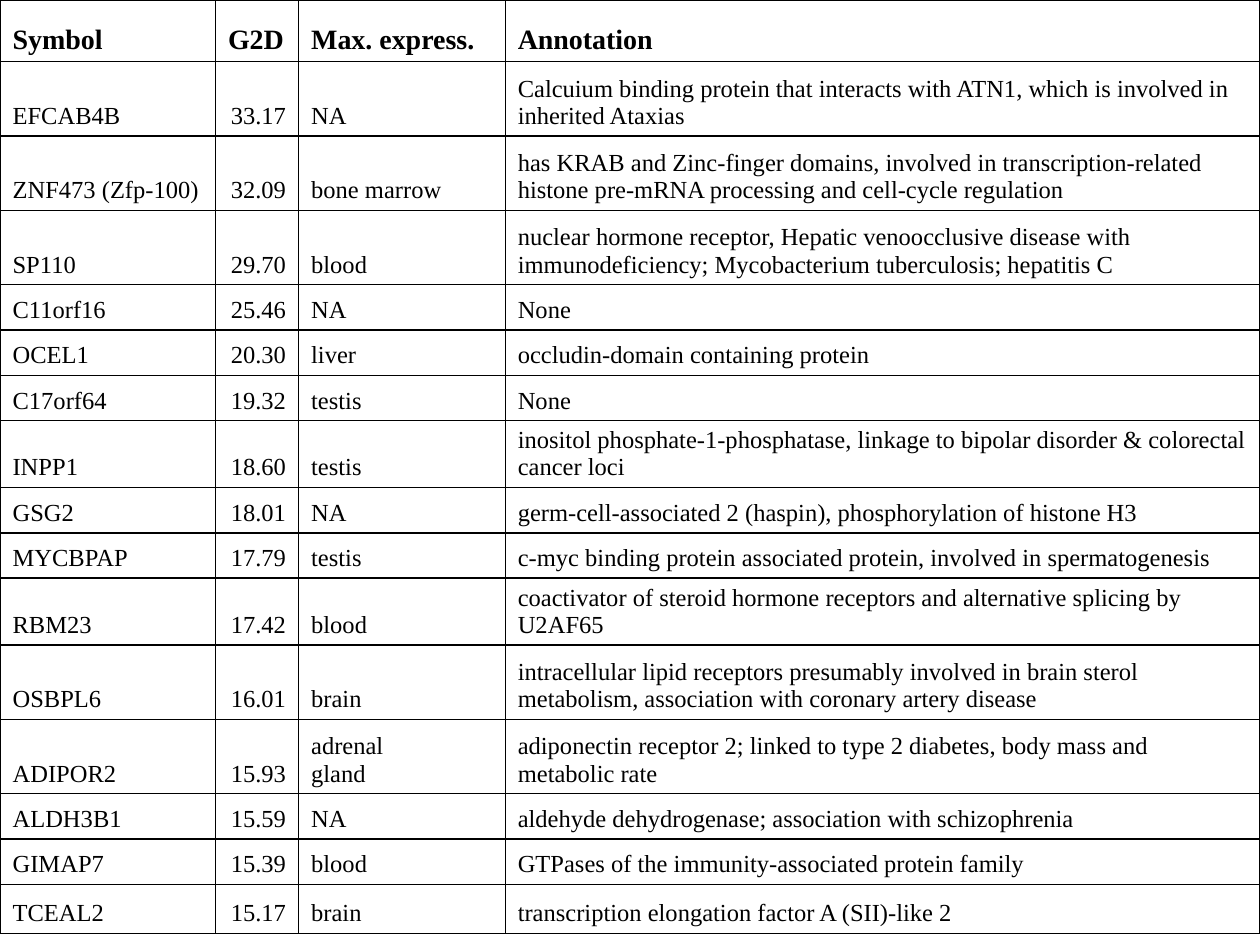
"""Build a slide with a table of genes, their scores, expression and annotation."""
from lxml.etree import SubElement
from pptx import Presentation
from pptx.dml.color import RGBColor
from pptx.enum.text import MSO_ANCHOR, PP_ALIGN
from pptx.oxml.ns import qn
from pptx.util import Inches, Pt

COL_WIDTHS = [1.71, 0.66, 1.64, 5.99]
ROW_HEIGHTS = [0.49, 0.59, 0.59, 0.59, 0.36, 0.36, 0.36, 0.53,
               0.36, 0.36, 0.53, 0.59, 0.59, 0.36, 0.36, 0.39]
BORDERS = {"a:lnL": 0.75, "a:lnR": 0.75, "a:lnT": 1, "a:lnB": 1}
BLACK = "000000"
HEADER_FONT = {"name": "Times New Roman", "size": Pt(16), "bold": True}
BODY_FONT = {"name": "Times New Roman", "size": Pt(14), "bold": False}
GENES = [
    ("Symbol", "G2D", "Max. express.", "Annotation"),
    ("EFCAB4B", "33.17", "NA",
     "Calcuium binding protein that interacts with ATN1, which is involved in "
     "inherited Ataxias"),
    ("ZNF473 (Zfp-100)", "32.09", "bone marrow",
     "has KRAB and Zinc-finger domains, involved in transcription-related "
     "histone pre-mRNA processing and cell-cycle regulation"),
    ("SP110", "29.70", "blood",
     "nuclear hormone receptor, Hepatic venoocclusive disease with "
     "immunodeficiency; Mycobacterium tuberculosis; hepatitis C"),
    ("C11orf16", "25.46", "NA", "None"),
    ("OCEL1", "20.30", "liver", "occludin-domain containing protein"),
    ("C17orf64", "19.32", "testis", "None"),
    ("INPP1", "18.60", "testis",
     "inositol phosphate-1-phosphatase, linkage to bipolar disorder & colorectal "
     "cancer loci"),
    ("GSG2", "18.01", "NA",
     "germ-cell-associated 2 (haspin), phosphorylation of histone H3"),
    ("MYCBPAP", "17.79", "testis",
     "c-myc binding protein associated protein, involved in spermatogenesis"),
    ("RBM23", "17.42", "blood",
     "coactivator of steroid hormone receptors and alternative splicing by U2AF65"),
    ("OSBPL6", "16.01", "brain",
     "intracellular lipid receptors presumably involved in brain sterol "
     "metabolism, association with coronary artery disease"),
    ("ADIPOR2", "15.93", "adrenal\vgland",
     "adiponectin receptor 2; linked to type 2 diabetes, body mass and "
     "metabolic rate"),
    ("ALDH3B1", "15.59", "NA",
     "aldehyde dehydrogenase; association with schizophrenia"),
    ("GIMAP7", "15.39", "blood",
     "GTPases of the immunity-associated protein family"),
    ("TCEAL2", "15.17", "brain",
     "transcription elongation factor A (SII)-like 2"),
]


def rgb(color):
    return RGBColor.from_string(color)


def add_borders(cell, color):
    tc_pr = cell._tc.get_or_add_tcPr()
    for i, (tag, width) in enumerate(BORDERS.items()):
        ln = SubElement(tc_pr, qn(tag), w=str(Pt(width)))
        fill = SubElement(ln, qn("a:solidFill"))
        SubElement(fill, qn("a:srgbClr"), val=color)
        tc_pr.insert(i, ln)


prs = Presentation()
prs.slide_width, prs.slide_height = Inches(10), Inches(7.5)
s = prs.slides.add_slide(prs.slide_layouts[6])

table = s.shapes.add_table(len(GENES), len(COL_WIDTHS), 0, 0, Inches(10),
                           Inches(sum(ROW_HEIGHTS))).table
table.horz_banding = False
for column, width in zip(table.columns, COL_WIDTHS):
    column.width = Inches(width)
for row, height in zip(table.rows, ROW_HEIGHTS):
    row.height = Inches(height)

for i, gene in enumerate(GENES):
    for j, text in enumerate(gene):
        cell = table.cell(i, j)
        cell.text = text
        cell.vertical_anchor = MSO_ANCHOR.BOTTOM
        cell.fill.background()
        add_borders(cell, BLACK)
        p = cell.text_frame.paragraphs[0]
        p.alignment = PP_ALIGN.RIGHT if i and j == 1 else PP_ALIGN.LEFT
        for r in p.runs:
            for key, value in (BODY_FONT if i else HEADER_FONT).items():
                setattr(r.font, key, value)
            r.font.color.rgb = rgb(BLACK)

prs.save("out.pptx")
